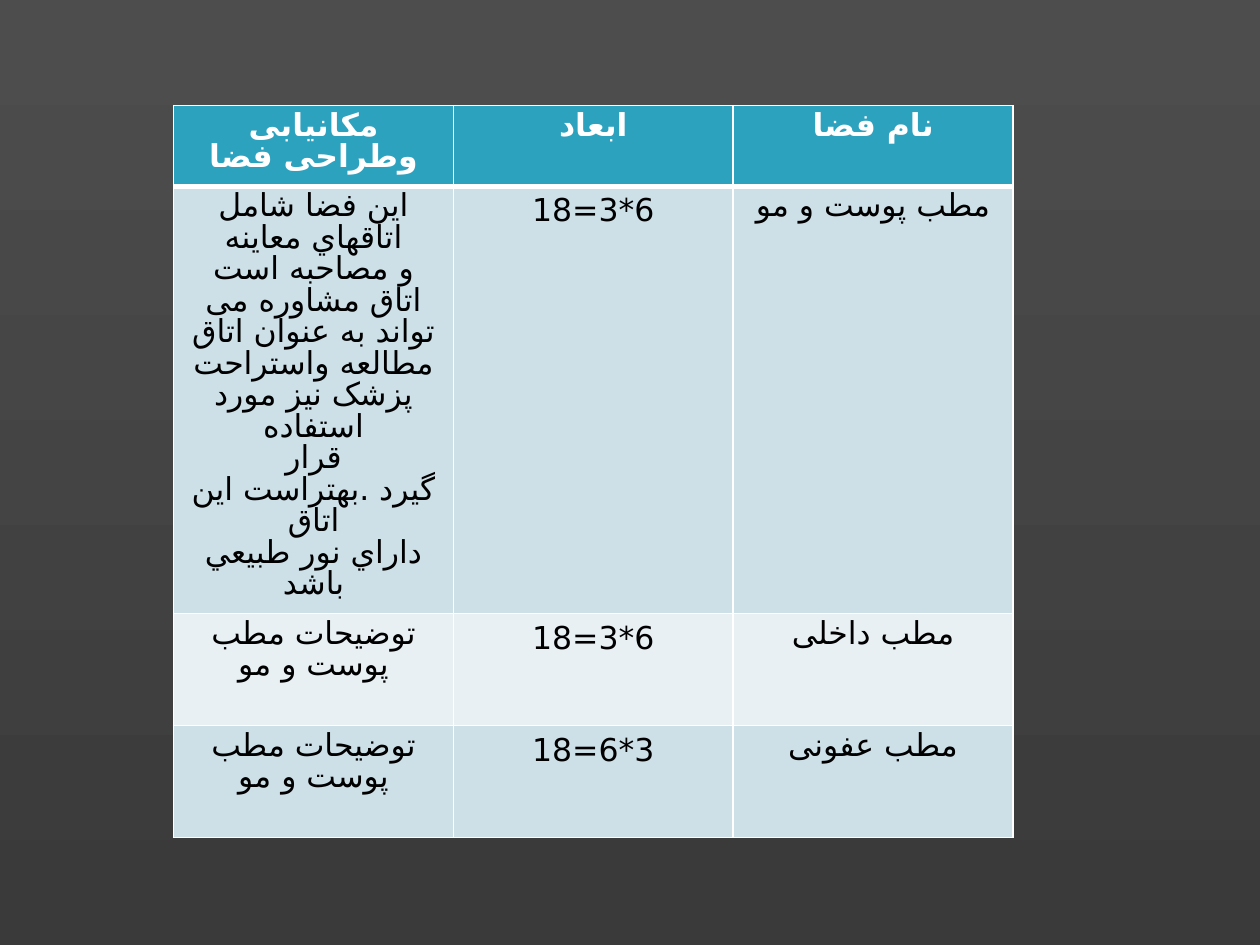
from lxml import etree
from pptx import Presentation
from pptx.dml.color import RGBColor
from pptx.enum.text import PP_ALIGN
from pptx.oxml.ns import qn
from pptx.util import Cm, Pt

CENTER = PP_ALIGN.CENTER
FONT = "DejaVu Sans"
WHITE, BLACK = "FFFFFF", "000000"
HEADER_FILL = "2DA2BF"
BAND_FILLS = ("CDE0E8", "E8F0F4")
BACKGROUND = ("4D4D4D", "3A3A3A")
COLUMN_WIDTH = 5.64
ROW_HEIGHTS = (1.63, 8.61, 2.26, 2.26)

DESCRIPTION = """اين فضا شامل اتاقهاي معاينه
و مصاحبه است اتاق مشاوره می
تواند به عنوان اتاق مطالعه واستراحت پزشک نیز مورد استفاده
قرار گيرد .بهتراست اين اتاق
داراي نور طبيعي باشد"""
SAME_AS_SKIN = "توضیحات مطب پوست و مو"
ROWS = (
    ("مکانیابی وطراحی فضا", "ابعاد", "نام فضا"),
    (DESCRIPTION, "18=3*6", "مطب پوست و مو"),
    (SAME_AS_SKIN, "18=3*6", "مطب داخلی"),
    (SAME_AS_SKIN, "18=6*3", "مطب عفونی"),
)


def color(value):
    return RGBColor.from_string(value)


def paint_background(page):
    fill = page.background.fill
    fill.gradient()
    fill.gradient_angle = 270
    for stop, value in zip(fill.gradient_stops, BACKGROUND):
        stop.color.rgb = color(value)


def add_borders(cell, widths):
    """Put white lines on the cell; widths maps side letters to points."""
    properties = cell._tc.get_or_add_tcPr()
    for index, (side, width) in enumerate(widths.items()):
        line = etree.Element(qn(f"a:ln{side}"), w=str(Pt(width)))
        fill = etree.SubElement(line, qn("a:solidFill"))
        etree.SubElement(fill, qn("a:srgbClr"), val=WHITE)
        properties.insert(index, line)


def write_line(para, text, font_format):
    para.alignment = CENTER
    if not text[0].isdigit():
        para.line_spacing = Pt(18)
        para._p.get_or_add_pPr().set("rtl", "1")
    span = para.add_run()
    span.text = text
    for name, value in font_format.items():
        setattr(span.font, name, value)
    etree.SubElement(span._r.get_or_add_rPr(), qn("a:cs"), typeface=FONT)


def fill_cell(cell, text, row_index):
    header = row_index == 0
    cell.fill.solid()
    cell.fill.fore_color.rgb = color(
        HEADER_FILL if header else BAND_FILLS[(row_index - 1) % 2])
    add_borders(cell, {"L": 1, "R": 1, "T": 3 if row_index == 1 else 1,
                       "B": 3 if header else 1})
    font_format = {"name": FONT, "size": Pt(18), "bold": header}
    frame = cell.text_frame
    for index, line in enumerate(text.split("\n")):
        para = frame.add_paragraph() if index else frame.paragraphs[0]
        write_line(para, line, font_format)
        para.runs[0].font.color.rgb = color(WHITE if header else BLACK)


def add_room_table(page):
    columns = len(ROWS[0])
    table = page.shapes.add_table(
        len(ROWS), columns, Cm(3.5), Cm(2.13),
        Cm(COLUMN_WIDTH * columns), Cm(sum(ROW_HEIGHTS))).table
    for column in table.columns:
        column.width = Cm(COLUMN_WIDTH)
    for row_index, (texts, height) in enumerate(zip(ROWS, ROW_HEIGHTS)):
        table.rows[row_index].height = Cm(height)
        for column_index, text in enumerate(texts):
            fill_cell(table.cell(row_index, column_index), text, row_index)


def main():
    deck = Presentation()
    deck.slide_width, deck.slide_height = Cm(25.4), Cm(19.05)
    page = deck.slides.add_slide(deck.slide_layouts[6])
    paint_background(page)
    add_room_table(page)
    deck.save("out.pptx")


if __name__ == "__main__":
    main()
